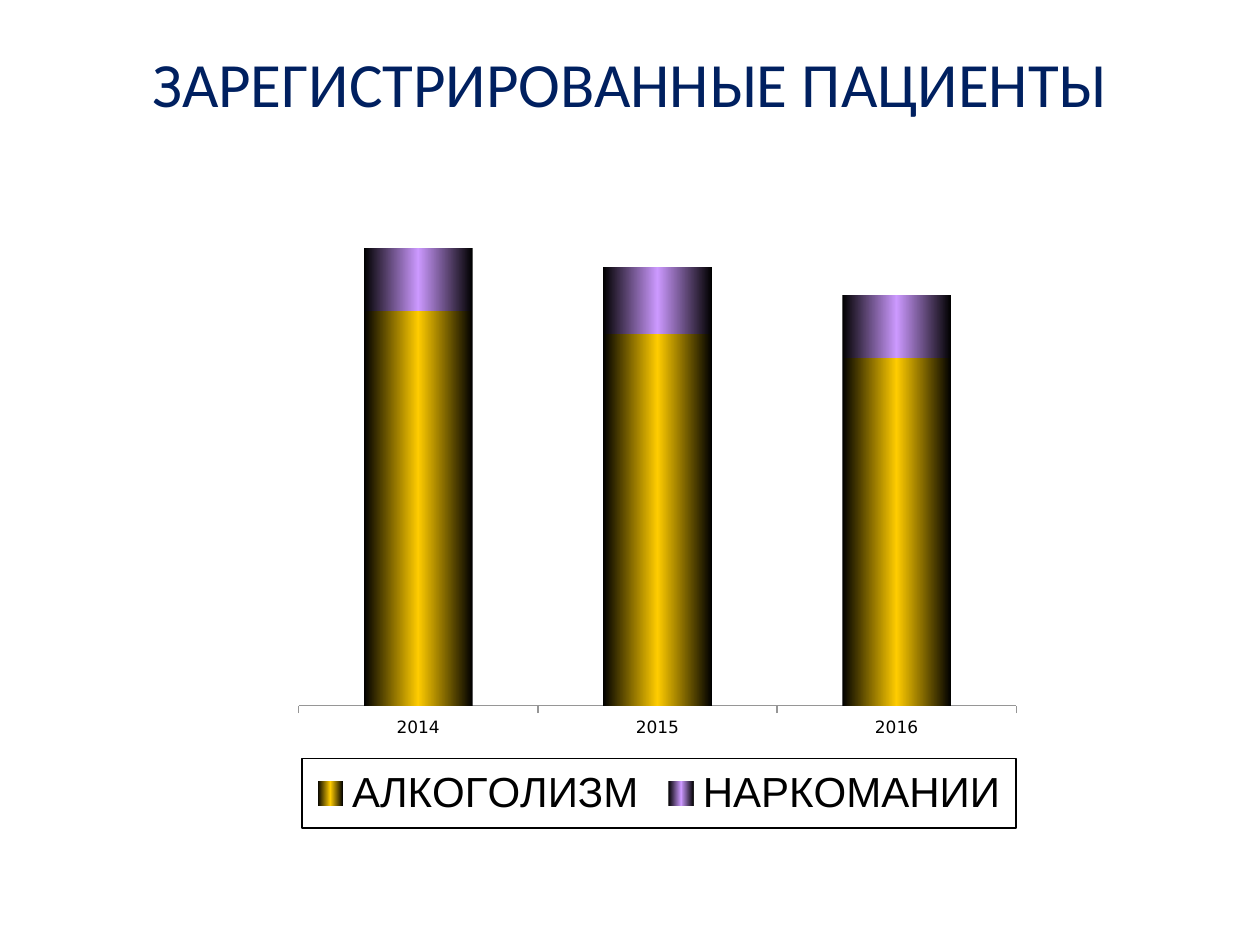
import copy

import lxml.etree
import pptx
import pptx.chart.data
import pptx.dml.color
import pptx.enum.chart
import pptx.enum.text
import pptx.oxml
import pptx.oxml.ns
import pptx.util


def color(hex_code):
    return pptx.dml.color.RGBColor.from_string(hex_code)


class Deck:
    INK, TITLE_INK, AXIS_INK = "000000", "002060", "969696"

    def __init__(self, width, height):
        self.file = pptx.Presentation()
        self.file.slide_width = pptx.util.Inches(width)
        self.file.slide_height = pptx.util.Inches(height)
        self.slide = self.file.slides.add_slide(self.file.slide_layouts[5])

    def area(self, left, top, width, height):
        across, down = self.file.slide_width, self.file.slide_height
        return (round(left * across), round(top * down),
                round(width * across), round(height * down))

    def style(self, font, name, size, ink):
        font.name, font.size, font.bold = name, pptx.util.Pt(size), False
        font.color.rgb = color(ink)

    def title(self, wording, *shares):
        heading = self.slide.shapes.title
        heading.left, heading.top, heading.width, heading.height = self.area(*shares)
        frame = heading.text_frame
        frame.word_wrap = True
        frame.auto_size = pptx.enum.text.MSO_AUTO_SIZE.NONE
        frame.vertical_anchor = pptx.enum.text.MSO_ANCHOR.MIDDLE
        line = frame.paragraphs[0]
        line.alignment = pptx.enum.text.PP_ALIGN.CENTER
        line.line_spacing = 0.9
        run = line.add_run()
        run.text = wording
        self.style(run.font, "Calibri", 36, self.TITLE_INK)

    def place(self, part, position, shares, target=None):
        qn = pptx.oxml.ns.qn
        for old in part.findall(qn("c:layout")):
            part.remove(old)
        layout = lxml.etree.Element(qn("c:layout"))
        manual = lxml.etree.SubElement(layout, qn("c:manualLayout"))
        settings = [("layoutTarget", target)] if target else []
        settings += [("xMode", "edge"), ("yMode", "edge")]
        settings += zip("xywh", shares)
        for tag, value in settings:
            lxml.etree.SubElement(manual, qn("c:" + tag), val=str(value))
        part.insert(position, layout)

    def cylinder(self, fill, ink):
        fill.gradient()
        fill.gradient_angle = 0
        stops = fill._fill._gradFill.gsLst
        stops.insert(1, copy.deepcopy(stops[0]))
        shades = (self.INK, ink, self.INK)
        for stop, place, shade in zip(fill.gradient_stops, (0, 0.5, 1), shades):
            stop.position = place
            stop.color.rgb = color(shade)

    def stacked_columns(self, years, patients, top_value, plot, legend, *shares):
        data = pptx.chart.data.CategoryChartData()
        data.categories = years
        for name, counts, _ in patients:
            data.add_series(name, counts)
        chart = self.slide.shapes.add_chart(
            pptx.enum.chart.XL_CHART_TYPE.COLUMN_STACKED, *self.area(*shares), data).chart
        chart.has_title = False
        self.style(chart.font, "DejaVu Sans", 8.5, self.INK)
        columns = chart.plots[0]
        columns.gap_width, columns.overlap = 120, 100
        columns.vary_by_categories = False
        for series, (_, _, ink) in zip(columns.series, patients):
            self.cylinder(series.format.fill, ink)
        self.axes(chart, top_value)
        self.place(chart._chartSpace.chart.plotArea, 0, plot, "inner")
        empty = [i for i, (_, counts, _) in enumerate(patients) if not any(counts)]
        self.legend(chart, legend, empty)

    def axes(self, chart, top_value):
        ticks = pptx.enum.chart.XL_TICK_MARK
        year_axis, count_axis = chart.category_axis, chart.value_axis
        year_axis.major_tick_mark = ticks.OUTSIDE
        year_axis.format.line.color.rgb = color(self.AXIS_INK)
        year_axis.format.line.width = pptx.util.Pt(0.81)
        self.style(year_axis.tick_labels.font, "DejaVu Sans", 9.7, self.INK)
        count_axis.minimum_scale, count_axis.maximum_scale = 0, top_value
        count_axis.has_major_gridlines = False
        count_axis.major_tick_mark = ticks.NONE
        count_axis.tick_label_position = pptx.enum.chart.XL_TICK_LABEL_POSITION.NONE
        count_axis.format.line.fill.background()

    def legend(self, chart, shares, hidden):
        qn, nsdecls = pptx.oxml.ns.qn, pptx.oxml.ns.nsdecls
        chart.has_legend = True
        key = chart.legend
        key.position = pptx.enum.chart.XL_LEGEND_POSITION.BOTTOM
        key.include_in_layout = False
        self.style(key.font, "Arial", 24, self.INK)
        self.place(key._element, 1, shares)
        for index in reversed(hidden):
            key._element.insert(1, pptx.oxml.parse_xml(
                f'<c:legendEntry {nsdecls("c")}><c:idx val="{index}"/>'
                '<c:delete val="1"/></c:legendEntry>'))
        border = pptx.oxml.parse_xml(
            f'<c:spPr {nsdecls("c", "a")}><a:noFill/><a:ln w="12700">'
            f'<a:solidFill><a:srgbClr val="{self.INK}"/></a:solidFill></a:ln></c:spPr>')
        key._element.find(qn("c:overlay")).addnext(border)


def main():
    deck = Deck(10, 7.5)
    deck.title("ЗАРЕГИСТРИРОВАННЫЕ ПАЦИЕНТЫ", 0, 0.4 / 7.5, 1, 0.59 / 7.5)
    deck.stacked_columns(
        ["2014", "2015", "2016"],
        [("АЛКОГОЛИЗМ", (100, 94, 88), "FFCC00"),
         ("НАРКОМАНИИ", (16, 17, 16), "CC99FF"),
         ("Series 3", (None, None, None), "33CCCC")],
        137, (0.033, 0.029, 0.94, 0.791), (0.037, 0.897, 0.936, 0.102),
        0.217, 1.15 / 7.5, 0.606, 5.43 / 7.5)
    deck.file.save("out.pptx")


if __name__ == "__main__":
    main()
